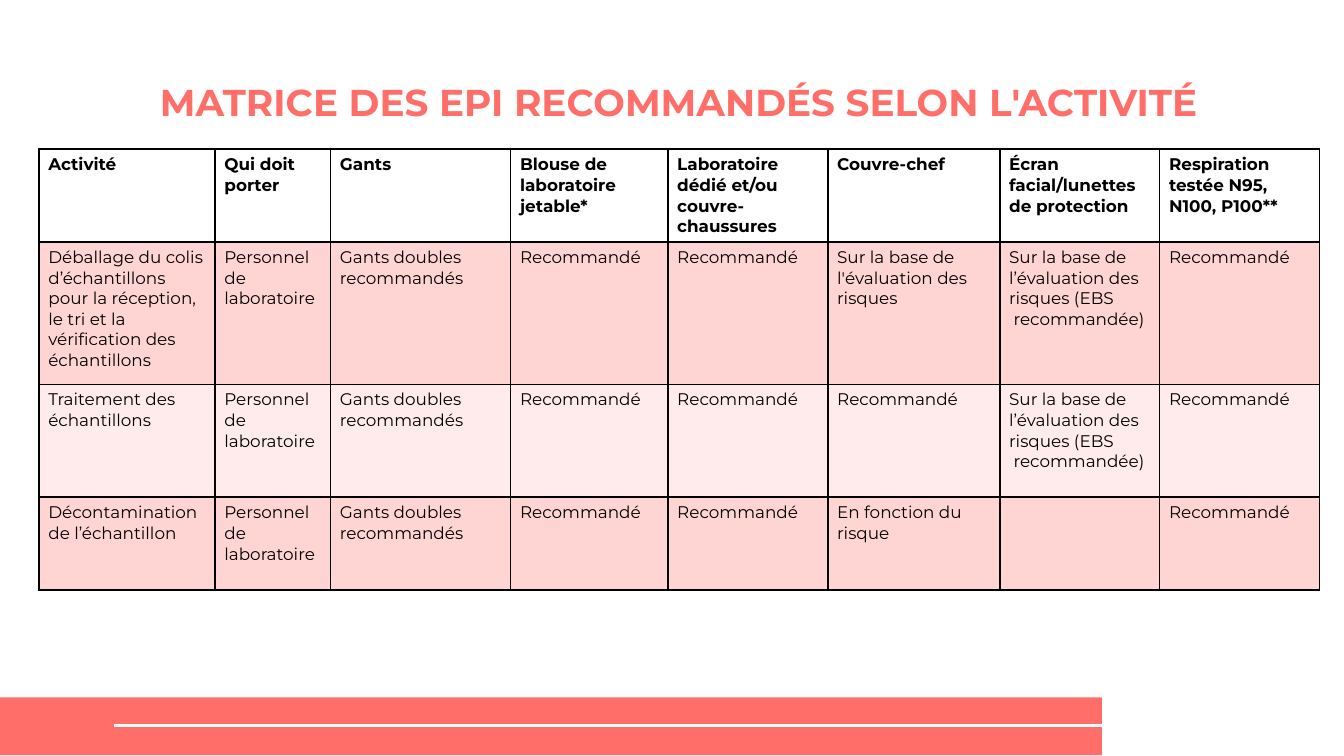
"""Build the slide with the matrix of recommended protective equipment."""
import lxml.etree
import pptx
import pptx.dml.color
import pptx.enum.shapes
import pptx.enum.text
import pptx.oxml
import pptx.oxml.ns
import pptx.util
from pptx.util import Inches

CORAL = "FF6E68"
BLACK = "000000"
WHITE = "FFFFFF"
ROW_FILLS = [None, "FFD5D4", "FFEBEB", "FFD5D4"]
COLUMN_WIDTHS = [1.31, 0.86, 1.34, 1.17, 1.19, 1.28, 1.19, 1.19]
ROW_HEIGHTS = [0.69, 1.06, 0.84, 0.69]

STAFF = "Personnel de laboratoire"
GLOVES = "Gants doubles recommandés"
YES = "Recommandé"
FACE = "Sur la base de l’évaluation des risques (EBS\n recommandée)"
MATRIX = [
    ["Activité", "Qui doit porter", "Gants", "Blouse de laboratoire jetable*",
     "Laboratoire dédié et/ou couvre-chaussures", "Couvre-chef",
     "Écran facial/lunettes de protection", "Respiration testée N95, N100, P100**"],
    ["Déballage du colis d’échantillons pour la réception, le tri et la vérification des échantillons",
     STAFF, GLOVES, YES, YES, "Sur la base de l'évaluation des risques", FACE, YES],
    ["Traitement des échantillons", STAFF, GLOVES, YES, YES, YES, FACE, YES],
    ["Décontamination de l’échantillon", STAFF, GLOVES, YES, YES, "En fonction du risque", "", YES],
]


def rgb(value):
    return pptx.dml.color.RGBColor.from_string(value)


def style_text(text_frame, size, color, bold):
    for paragraph in text_frame.paragraphs:
        for run in paragraph.runs:
            run.font.name = "Montserrat"
            run.font.size = pptx.util.Pt(size)
            run.font.bold = bold
            run.font.color.rgb = rgb(color)


deck = pptx.Presentation()
deck.slide_width = Inches(10)
deck.slide_height = Inches(10 * 9 / 16)
slide = deck.slides.add_slide(deck.slide_layouts[6])
slide.background.fill.solid()
slide.background.fill.fore_color.rgb = rgb(WHITE)

footer_band = slide.shapes.add_shape(
    pptx.enum.shapes.MSO_SHAPE.RECTANGLE, 0, Inches(5.19), Inches(8.2), Inches(0.43))
footer_band.shadow.inherit = False
footer_band.fill.solid()
footer_band.fill.fore_color.rgb = rgb(CORAL)
footer_band.line.fill.background()

footer_rule = slide.shapes.add_connector(
    pptx.enum.shapes.MSO_CONNECTOR.STRAIGHT,
    Inches(8.26), Inches(5.4), Inches(0.85), Inches(5.4))
footer_rule.line.color.rgb = rgb(WHITE)
footer_rule.line.width = pptx.util.Pt(1.5)
lxml.etree.SubElement(footer_rule._element.spPr, pptx.oxml.ns.qn("a:effectLst"))

title = slide.shapes.add_textbox(Inches(0.29), Inches(0.49), Inches(9.52), Inches(0.63)).text_frame
title.word_wrap = True
title.vertical_anchor = pptx.enum.text.MSO_ANCHOR.TOP
title.margin_left = title.margin_right = Inches(0.1)
title.margin_top = title.margin_bottom = Inches(0.1)
title.text = "MATRICE DES EPI RECOMMANDÉS SELON L'ACTIVITÉ"
title.paragraphs[0].alignment = pptx.enum.text.PP_ALIGN.CENTER
style_text(title, 20, CORAL, True)

matrix = slide.shapes.add_table(
    len(MATRIX), len(COLUMN_WIDTHS), Inches(0.29), Inches(1.11),
    Inches(sum(COLUMN_WIDTHS)), Inches(sum(ROW_HEIGHTS))).table
matrix.horz_banding = False
for column, width in zip(matrix.columns, COLUMN_WIDTHS):
    column.width = Inches(width)
for row, height in zip(matrix.rows, ROW_HEIGHTS):
    row.height = Inches(height)

for row_index, (labels, row_fill) in enumerate(zip(MATRIX, ROW_FILLS)):
    for column_index, label in enumerate(labels):
        cell = matrix.cell(row_index, column_index)
        cell.margin_left = cell.margin_right = Inches(0.07)
        cell.margin_top = cell.margin_bottom = Inches(0.04)
        cell.text_frame.text = label
        style_text(cell.text_frame, 9, BLACK, row_index == 0)
        cell_properties = cell._tc.get_or_add_tcPr()
        for side in ("lnL", "lnR", "lnT", "lnB"):
            cell_properties.append(pptx.oxml.parse_xml(
                f'<a:{side} {pptx.oxml.ns.nsdecls("a")} w="12700"><a:solidFill>'
                f'<a:srgbClr val="{BLACK}"/></a:solidFill></a:{side}>'))
        if row_fill:
            cell.fill.solid()
            cell.fill.fore_color.rgb = rgb(row_fill)
        else:
            cell.fill.background()

deck.save("out.pptx")
